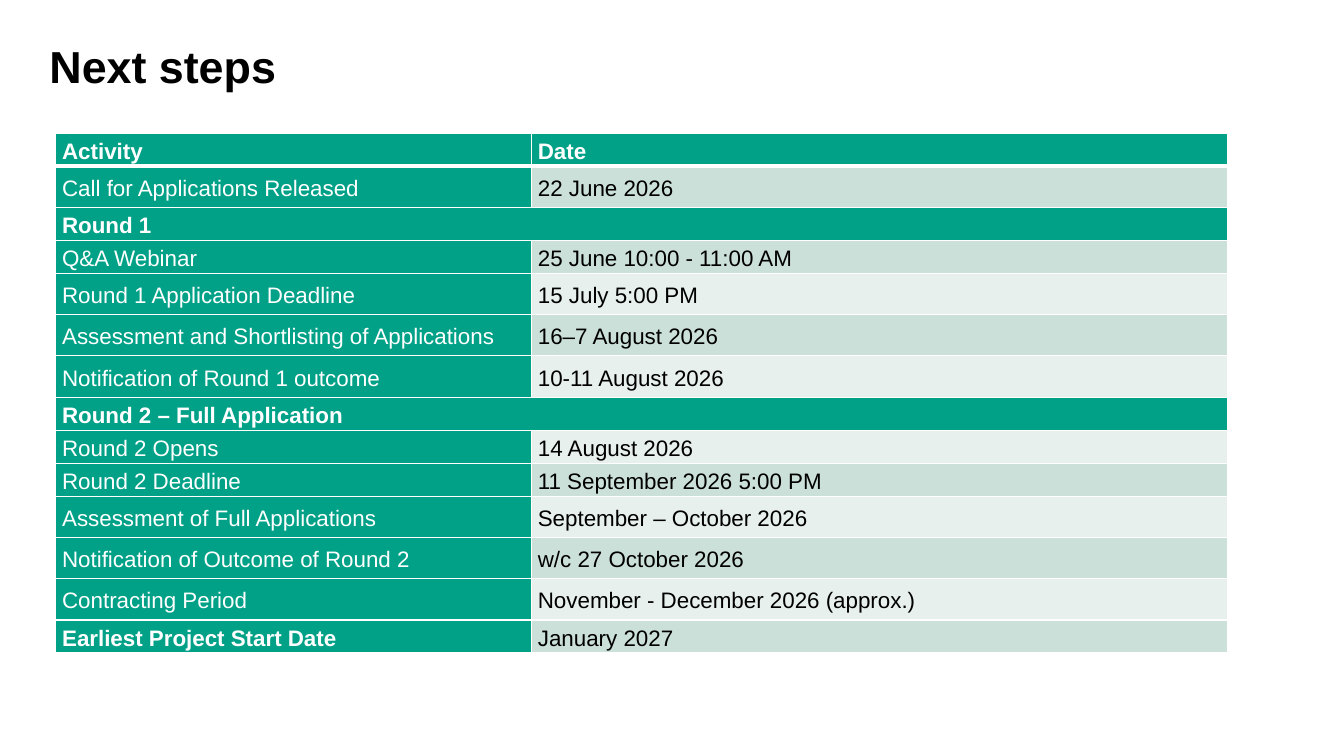
from pptx import Presentation
from pptx.dml.color import RGBColor
from pptx.enum.text import MSO_ANCHOR as Anchor
from pptx.oxml.ns import qn
from pptx.util import Pt
from lxml.etree import SubElement

COLORS = {
    "black": "000000",
    "white": "FFFFFF",
    "green": "01A188",
    "dark_band": "CCE0DA",
    "light_band": "E7F0ED",
}
FONT = "Arial"
SHORT, TALL = 23.6, 29.5
COLUMN_WIDTHS = (339.84, 496.8)
HEADER_ROW = 0

SCHEDULE = [
    ("Activity", "Date", SHORT),
    ("Call for Applications Released", "22 June 2026", TALL),
    ("Round 1", None, SHORT),
    ("Q&A Webinar", "25 June 10:00 - 11:00 AM", SHORT),
    ("Round 1 Application Deadline", "15 July 5:00 PM", TALL),
    ("Assessment and Shortlisting of Applications", "16–7 August 2026", TALL),
    ("Notification of Round 1 outcome", "10-11 August 2026", TALL),
    ("Round 2 – Full Application", None, SHORT),
    ("Round 2 Opens", "14 August 2026", SHORT),
    ("Round 2 Deadline", "11 September 2026 5:00 PM", SHORT),
    ("Assessment of Full Applications", "September – October 2026", TALL),
    ("Notification of Outcome of Round 2", "w/c 27 October 2026", TALL),
    ("Contracting Period", "November - December 2026 (approx.)", TALL),
    ("Earliest Project Start Date", "January 2027", SHORT),
]
LAST_ROW = len(SCHEDULE) - 1


def set_all(target, values):
    for name, value in values.items():
        setattr(target, name, value)


def write(frame, text, size, color, bold, spacing):
    para = frame.paragraphs[0]
    para.line_spacing = spacing
    span = para.add_run()
    span.text = text
    set_all(span.font, {"name": FONT, "size": Pt(size), "bold": bold})
    span.font.color.rgb = RGBColor.from_string(COLORS[color])


def add_borders(cell, widths):
    properties = cell._tc.get_or_add_tcPr()
    for side in "LRTB":
        line = SubElement(properties, qn(f"a:ln{side}"), w=str(Pt(widths.get(side, 1))))
        fill = SubElement(line, qn("a:solidFill"))
        SubElement(fill, qn("a:srgbClr"), val=COLORS["white"])


def add_title(page, left, top, width, height):
    box = page.shapes.add_textbox(Pt(left), Pt(top), Pt(width), Pt(height))
    set_all(box.text_frame, {"word_wrap": True, "vertical_anchor": Anchor.TOP})
    write(box.text_frame, "Next steps", 32, "black", True, 0.9)


def format_cell(cell, row, column):
    edges = {0: {"B": 3}, 1: {"T": 3}}
    add_borders(cell, edges.get(row, {}))
    band = "dark_band" if row % 2 else "light_band"
    in_green = column == 0 or row == HEADER_ROW or SCHEDULE[row][1] is None
    cell.fill.solid()
    cell.fill.fore_color.rgb = RGBColor.from_string(COLORS["green" if in_green else band])
    set_all(cell, {
        "margin_left": Pt(4.5),
        "margin_right": Pt(4.5),
        "margin_top": 0,
        "margin_bottom": 0,
        "vertical_anchor": Anchor.MIDDLE,
    })
    return "white" if in_green else "black"


def add_schedule(page, left, top):
    width, height = sum(COLUMN_WIDTHS), sum(entry[2] for entry in SCHEDULE)
    table = page.shapes.add_table(
        len(SCHEDULE), 2, Pt(left), Pt(top), Pt(width), Pt(height)
    ).table
    for column, column_width in zip(table.columns, COLUMN_WIDTHS):
        column.width = Pt(column_width)
    for row, (activity, date, row_height) in enumerate(SCHEDULE):
        table.rows[row].height = Pt(row_height)
        is_section = date is None
        if is_section:
            table.cell(row, 0).merge(table.cell(row, 1))
        for column, text in enumerate((activity, date)):
            cell = table.cell(row, column)
            color = format_cell(cell, row, column)
            bold = row == HEADER_ROW or is_section or (row == LAST_ROW and column == 0)
            if text:
                write(cell.text_frame, text, 16, color, bold, 1.15)


def main():
    deck = Presentation()
    set_all(deck, {"slide_width": Pt(960), "slide_height": Pt(540)})
    page = deck.slides.add_slide(deck.slide_layouts[6])
    add_title(page, 28.2, 28.2, 901.4, 66.2)
    add_schedule(page, 39.9, 95)
    deck.save("out.pptx")


if __name__ == "__main__":
    main()
